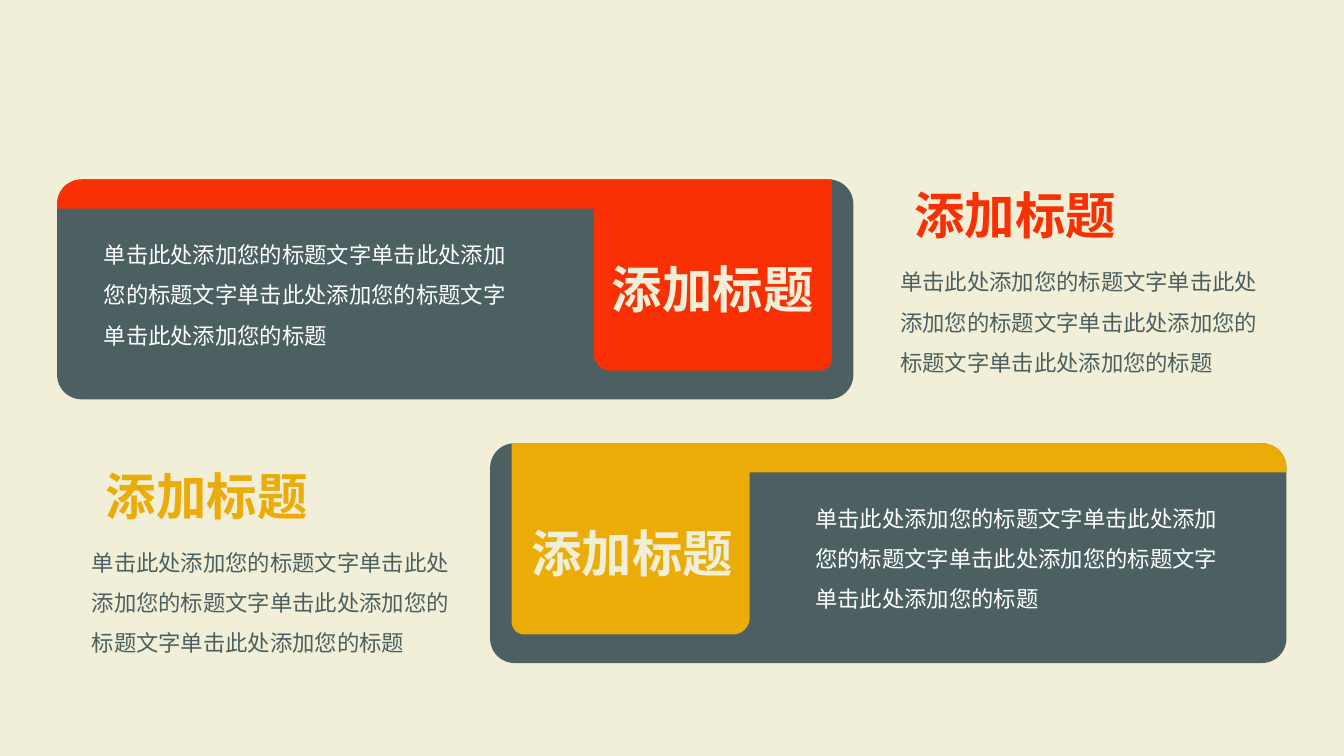
from math import cos, radians, sin

from lxml.etree import SubElement
from pptx import Presentation
from pptx.dml.color import RGBColor
from pptx.enum.shapes import MSO_SHAPE
from pptx.enum.text import MSO_ANCHOR, MSO_AUTO_SIZE, PP_ALIGN
from pptx.oxml.ns import qn
from pptx.util import Pt

THEME = {
    "font": "Noto Sans CJK SC",
    "cream": RGBColor.from_string("F1EFD7"),
    "slate": RGBColor.from_string("4C6062"),
    "red": RGBColor.from_string("F83003"),
    "amber": RGBColor.from_string("EBAC07"),
    "white": RGBColor.from_string("FFFFFF"),
    "heading": {"size": Pt(36), "bold": True},
    "body": {"size": Pt(16), "bold": False},
}
HEADING = "添加标题"
BODY = "单击此处添加您的标题文字" * 3 + "单击此处添加您的标题"

PANEL_WIDTH, PANEL_HEIGHT, PANEL_RADIUS = 568.8, 157, 17.5
HEADING_SIZE = (178.6, 51)
BODY_HEIGHT = 94.5


def write_text(box, place, text, style, color):
    """Place a text box or placeholder and give it one formatted paragraph."""
    box.left, box.top, box.width, box.height = map(Pt, place)
    heading = style == "heading"
    frame = box.text_frame
    frame_format = {"word_wrap": True, "auto_size": MSO_AUTO_SIZE.NONE,
                    "vertical_anchor": MSO_ANCHOR.TOP}
    para = frame.paragraphs[0]
    para_format = {"alignment": PP_ALIGN.CENTER if heading else PP_ALIGN.LEFT,
                   "line_spacing": 1.0 if heading else 1.5,
                   "space_before": Pt(0)}
    span = para.add_run()
    span.text = text
    span_format = {"name": THEME["font"], **THEME[style]}
    for target, formats in ((frame, frame_format), (para, para_format),
                            (span.font, span_format)):
        for name, value in formats.items():
            setattr(target, name, value)
    span.font.color.rgb = THEME[color]
    # East Asian typeface, and no bullet or indent
    SubElement(span.font._element, qn("a:ea")).set("typeface", THEME["font"])
    properties = para._p.get_or_add_pPr()
    properties.set("marL", "0")
    properties.set("indent", "0")
    SubElement(properties, qn("a:buNone"))


def corner(center_x, center_y, radius, start, end):
    """Points along a quarter circle, angles in degrees, y pointing down."""
    angles = [radians(start + (end - start) * step / 12) for step in range(13)]
    return [(center_x + radius * cos(angle), center_y + radius * sin(angle))
            for angle in angles]


# Deck and page
deck = Presentation()
deck.slide_width, deck.slide_height = Pt(960), Pt(540)
page = deck.slides.add_slide(deck.slide_layouts.get_by_name("Comparison"))
page.background.fill.solid()
page.background.fill.fore_color.rgb = THEME["cream"]
page_title = page.shapes.title._element
page_title.getparent().remove(page_title)

# Coloured tab, measured from the panel's rounded top corner
TAB_WIDTH, TAB_HEIGHT, TAB_INNER, BAND_HEIGHT = 553.4, 136.6, 383.4, 20.8
tab_outline = [
    *corner(PANEL_RADIUS, PANEL_RADIUS, PANEL_RADIUS, 180, 270),
    (TAB_WIDTH, 0),
    *corner(TAB_WIDTH - 9, TAB_HEIGHT - 9, 9, 0, 90),
    *corner(TAB_INNER + 12, TAB_HEIGHT - 12, 12, 90, 180),
    (TAB_INNER, BAND_HEIGHT),
    (0, BAND_HEIGHT),
]

# One row per card; the second one is mirrored
rows = [
    {"color": "red", "panel": (40.8, 128.2), "mirrored": False,
     "tab_text": 419.8, "panel_text": 67,
     "side": (635.8, 128.2), "placeholders": (1, 2)},
    {"color": "amber", "panel": (350.1, 316.6), "mirrored": True,
     "tab_text": 362.2, "panel_text": 575.3,
     "side": (58.3, 328.3), "placeholders": (3, 4)},
]
for row in rows:
    left, top = row["panel"]

    # Panel and tab
    panel = page.shapes.add_shape(
        MSO_SHAPE.ROUNDED_RECTANGLE,
        *map(Pt, (left, top, PANEL_WIDTH, PANEL_HEIGHT)))
    panel.adjustments[0] = PANEL_RADIUS / PANEL_HEIGHT
    points = [(Pt(left + (PANEL_WIDTH - x if row["mirrored"] else x)),
               Pt(top + y)) for x, y in tab_outline]
    builder = page.shapes.build_freeform(*points[0])
    builder.add_line_segments(points[1:], close=True)
    tab = builder.convert_to_shape()
    for shape, color in ((panel, "slate"), (tab, row["color"])):
        shape.shadow.inherit = False
        shape.fill.solid()
        shape.fill.fore_color.rgb = THEME[color]
        shape.line.fill.background()

    # Text on the card
    tab_place = (row["tab_text"], top + 52.5, *HEADING_SIZE)
    panel_place = (row["panel_text"], top + 31, 308.9, BODY_HEIGHT)
    for place, text, style, color in (
            (tab_place, HEADING, "heading", "cream"),
            (panel_place, BODY, "body", "white")):
        box = page.shapes.add_textbox(*map(Pt, place))
        write_text(box, place, text, style, color)

    # Heading and text beside the card
    side_left, side_top = row["side"]
    heading_index, body_index = row["placeholders"]
    placeholders = {item.placeholder_format.idx: item
                    for item in page.placeholders}
    write_text(placeholders[heading_index],
               (side_left, side_top, *HEADING_SIZE),
               HEADING, "heading", row["color"])
    write_text(placeholders[body_index],
               (side_left, side_top + 50.4, 275, BODY_HEIGHT),
               BODY, "body", "slate")

deck.save("out.pptx")
